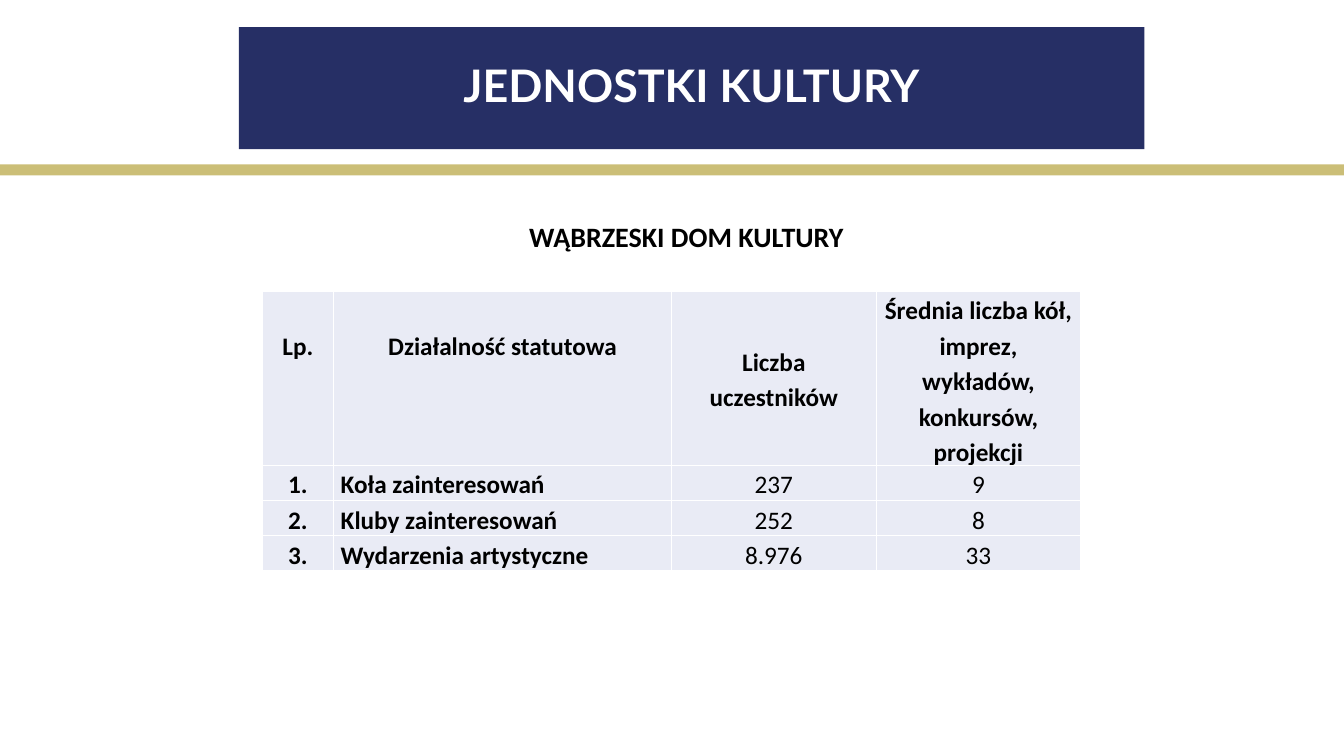
from dataclasses import dataclass

from lxml import etree
from pptx import Presentation
from pptx.dml.color import RGBColor
from pptx.enum.shapes import MSO_SHAPE
from pptx.enum.text import MSO_ANCHOR, PP_ALIGN
from pptx.oxml.ns import qn
from pptx.util import Inches, Pt

RECT = MSO_SHAPE.RECTANGLE
TOP, MIDDLE = MSO_ANCHOR.TOP, MSO_ANCHOR.MIDDLE
LEFT, CENTER, JUSTIFY = PP_ALIGN.LEFT, PP_ALIGN.CENTER, PP_ALIGN.JUSTIFY

# Content
TITLE = "JEDNOSTKI KULTURY"
HEADING = "WĄBRZESKI DOM KULTURY"
HEAD = ("Lp.", "Działalność statutowa", "Liczba uczestników",
        "Średnia liczba kół, imprez, wykładów, konkursów, projekcji")
ROWS = [
    ("1.", "Koła zainteresowań", "237", "9"),
    ("2.", "Kluby zainteresowań", "252", "8"),
    ("3.", "Wydarzenia artystyczne", "8.976", "33"),
]

# Layout in inches
WIDE, HIGH = 13.33, 7.5
BAND = (0, 1.63, WIDE, 0.11)
TITLE_BOX = (2.37, 0.27, 8.98, 1.21)
HEADING_BOX = (5.15, 1.96, 4.15, 0.73)
COLS = (0.71, 3.35, 2.03, 2.03)
HEAD_ROW, ROW = 1.71, 0.35
TABLE_AT = (2.6, 2.89)
SIDE = 0.07


@dataclass(frozen=True)
class Theme:
    navy: str = "262F65"
    gold: str = "CBBE77"
    pale: str = "E9EBF5"
    white: str = "FFFFFF"
    black: str = "000000"
    title_font: str = "Lato"
    font: str = "Calibri"
    title: int = 32
    heading: int = 20
    cell: int = 18


THEME = Theme()


def paint(item, color):
    item.fill.solid()
    item.fill.fore_color.rgb = RGBColor.from_string(color)


def write(frame, text, size, color, align, spacing, bold=True, face=THEME.font):
    para = frame.paragraphs[0]
    para.text = text
    para.alignment = align
    para.line_spacing = spacing
    font = para.font
    font.name, font.size, font.bold = face, Pt(size), bold
    font.color.rgb = RGBColor.from_string(color)


def edge(cell, color):
    props = cell._tc.get_or_add_tcPr()
    for side in ("lnL", "lnR", "lnT", "lnB"):
        line = etree.SubElement(props, qn(f"a:{side}"), w=str(Pt(1)))
        solid = etree.SubElement(line, qn("a:solidFill"))
        etree.SubElement(solid, qn("a:srgbClr"), val=color)


def add_band(slide):
    band = slide.shapes.add_shape(RECT, *map(Inches, BAND))
    band.shadow.inherit = False
    paint(band, THEME.gold)
    band.line.fill.background()


def add_title(slide):
    title = slide.shapes.title
    title.left, title.top, title.width, title.height = map(Inches, TITLE_BOX)
    paint(title, THEME.navy)
    title.text_frame.vertical_anchor = MIDDLE
    write(title.text_frame, TITLE, THEME.title, THEME.white, CENTER, 0.9,
          face=THEME.title_font)


def add_heading(slide):
    frame = slide.shapes.add_textbox(*map(Inches, HEADING_BOX)).text_frame
    frame.word_wrap = True
    write(frame, HEADING, THEME.heading, THEME.black, LEFT, 1.5)


def add_grid(slide):
    data = [HEAD, *ROWS]
    size = (sum(COLS), HEAD_ROW + ROW * len(ROWS))
    table = slide.shapes.add_table(len(data), len(COLS),
                                   *map(Inches, TABLE_AT + size)).table
    table.first_row = table.horz_banding = False
    for col, width in zip(table.columns, COLS):
        col.width = Inches(width)
    for r, texts in enumerate(data):
        table.rows[r].height = Inches(ROW if r else HEAD_ROW)
        for c, text in enumerate(texts):
            cell = table.cell(r, c)
            label = c < 2
            # Header labels sit one line below the top
            cell.margin_top = Inches(ROW if label and r == 0 else 0)
            cell.margin_bottom = 0
            cell.margin_left = cell.margin_right = Inches(SIDE)
            cell.vertical_anchor = TOP if label else MIDDLE
            edge(cell, THEME.white)
            paint(cell, THEME.pale)
            write(cell.text_frame, text, THEME.cell, THEME.black,
                  JUSTIFY if r and c == 1 else CENTER, 1.15,
                  bold=label or r == 0)


def main():
    deck = Presentation()
    deck.slide_width, deck.slide_height = Inches(WIDE), Inches(HIGH)
    slide = deck.slides.add_slide(deck.slide_layouts[5])
    add_band(slide)
    add_title(slide)
    add_heading(slide)
    add_grid(slide)
    deck.save("out.pptx")


if __name__ == "__main__":
    main()
